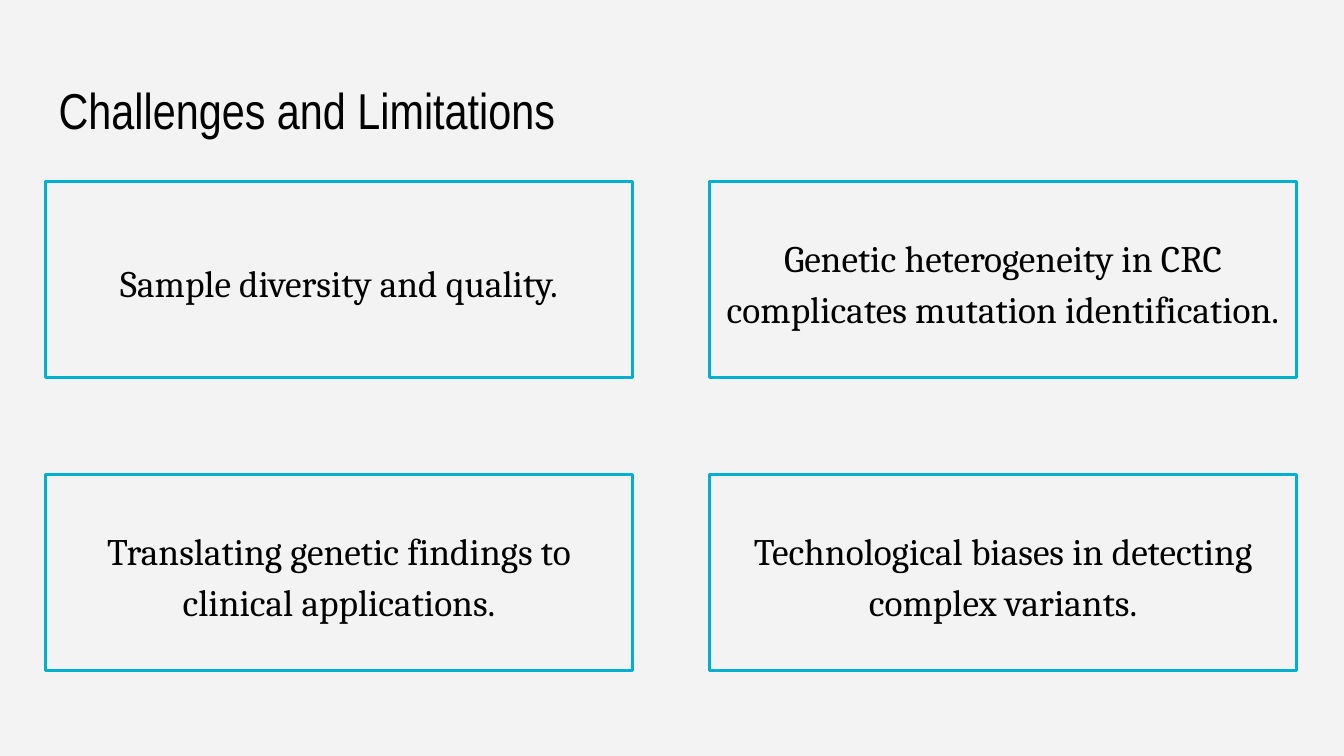
"""Builds the Challenges and Limitations slide: a title above a two-by-two grid of cards."""
from dataclasses import dataclass

from pptx import Presentation
from pptx.dml.color import RGBColor
from pptx.enum import shapes, text
from pptx.util import Cm, Pt

COLOURS = {"background": "F3F3F3", "border": "01AFD1", "ink": "000000"}
MARGIN, GRID_TOP = 0.86, 3.43
CARD_WIDTH, CARD_HEIGHT = 11.1, 3.71
COLUMN_STEP, ROW_STEP = 12.55, 5.54
INSET = 0.25


@dataclass
class Card:
    wording: str
    column: int
    row: int


CARDS = [
    Card("Sample diversity and quality.", 0, 0),
    Card("Translating genetic findings to clinical applications.", 0, 1),
    Card("Genetic heterogeneity in CRC complicates mutation identification.", 1, 0),
    Card("Technological biases in detecting complex variants.", 1, 1),
]


def colour(name: str) -> RGBColor:
    return RGBColor.from_string(COLOURS[name])


def write(frame, wording: str, font_name: str, size: float, anchor):
    frame.word_wrap = True
    frame.vertical_anchor = anchor
    frame.margin_left = frame.margin_right = Cm(INSET)
    frame.margin_top = frame.margin_bottom = Cm(INSET)
    frame.text = wording
    paragraph = frame.paragraphs[0]
    font = paragraph.runs[0].font
    font.name, font.size = font_name, Pt(size)
    font.color.rgb = colour("ink")
    return paragraph


def draw_title(slide, wording: str) -> None:
    title = slide.shapes.add_textbox(Cm(MARGIN), Cm(1.24), Cm(23.67), Cm(1.6))
    write(title.text_frame, wording, "Arial Narrow", 27, text.MSO_ANCHOR.TOP)


def draw_card(slide, card: Card) -> None:
    box = slide.shapes.add_shape(
        shapes.MSO_SHAPE.RECTANGLE,
        Cm(MARGIN + card.column * COLUMN_STEP),
        Cm(GRID_TOP + card.row * ROW_STEP),
        Cm(CARD_WIDTH),
        Cm(CARD_HEIGHT),
    )
    box.shadow.inherit = False
    box.fill.background()
    box.line.color.rgb = colour("border")
    box.line.width = Pt(1.5)
    challenge = write(box.text_frame, card.wording, "Cambria", 20, text.MSO_ANCHOR.MIDDLE)
    challenge.alignment = text.PP_ALIGN.CENTER
    challenge.line_spacing = 1.15
    challenge.space_before = challenge.space_after = Pt(12)


def main() -> None:
    deck = Presentation()
    deck.slide_width, deck.slide_height = Cm(25.4), Cm(14.29)
    slide = deck.slides.add_slide(deck.slide_layouts[6])
    slide.background.fill.solid()
    slide.background.fill.fore_color.rgb = colour("background")
    draw_title(slide, "Challenges and Limitations")
    for card in CARDS:
        draw_card(slide, card)
    deck.save("out.pptx")


if __name__ == "__main__":
    main()
